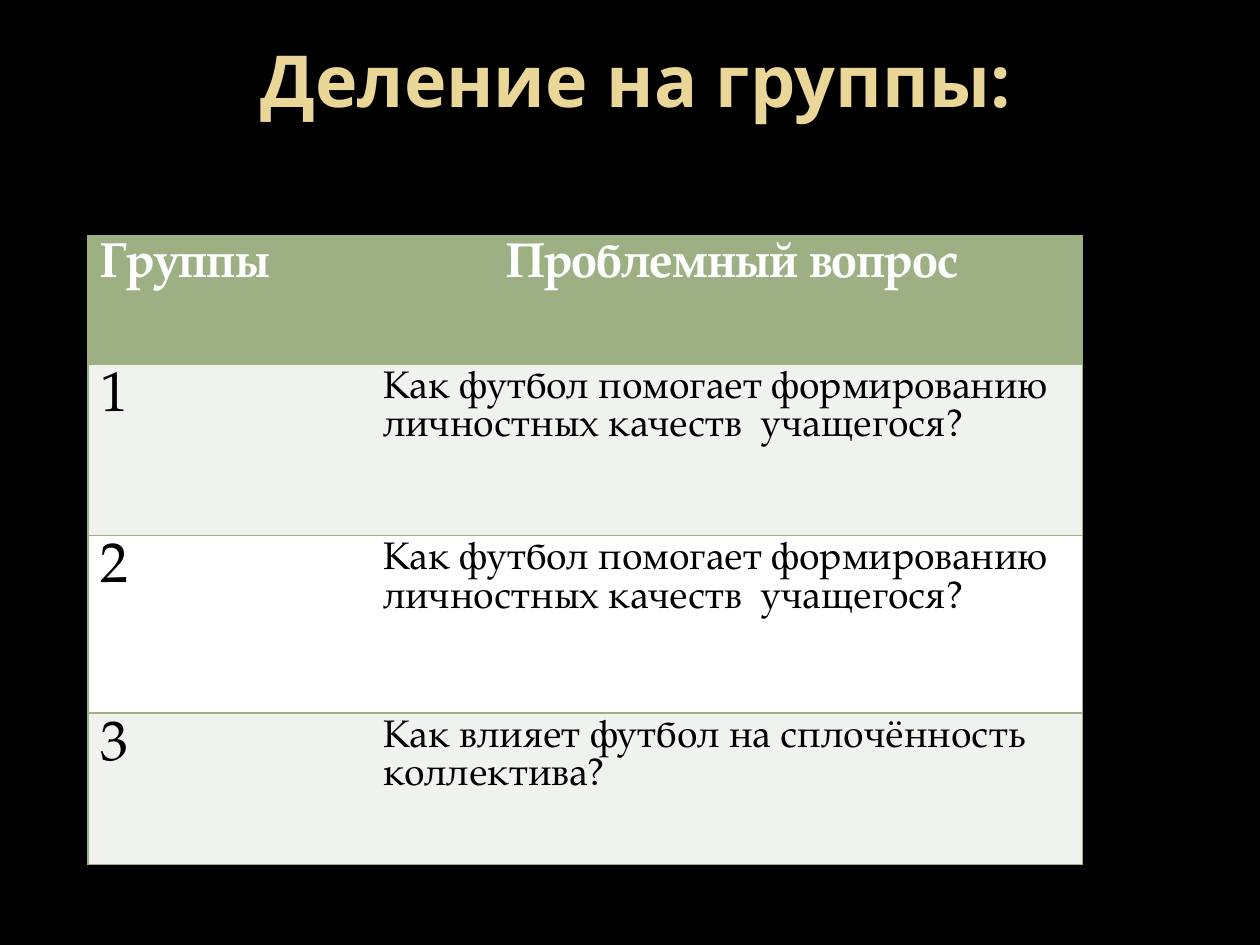
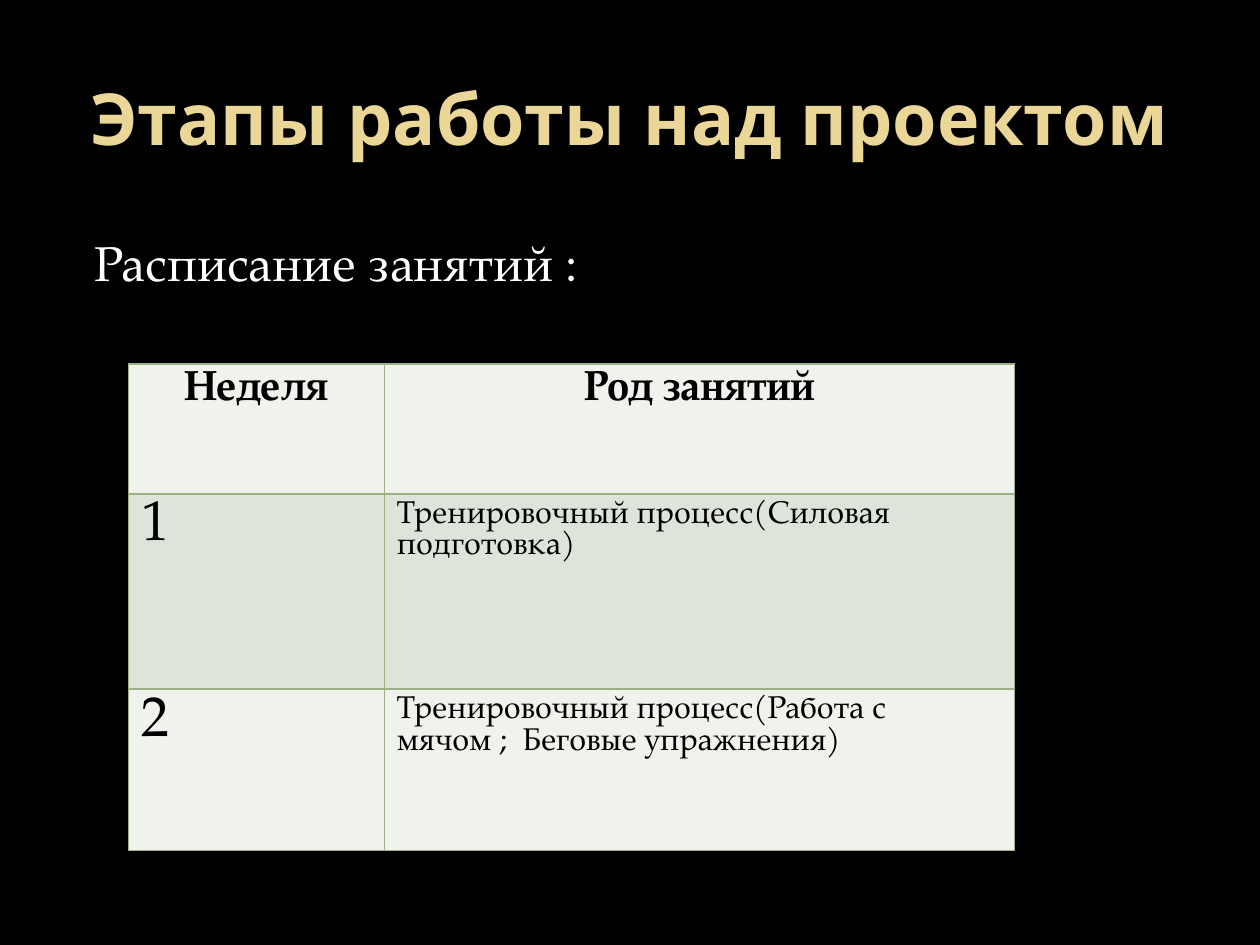
"""Build two slides on a football project: groups and stages."""
from dataclasses import dataclass

from lxml import etree
from pptx import Presentation
from pptx import util as u
from pptx.dml import color
from pptx.enum import text
from pptx.oxml import ns

SANS, SERIF = "Open Sans", "TeX Gyre Pagella"
BLACK, WHITE, GOLD = "000000", "FFFFFF", "EAD696"
GREEN, PALE, SAGE = "9CB084", "EFF2ED", "DEE4D9"
LEFT, MID = text.PP_ALIGN.LEFT, text.PP_ALIGN.CENTER
SIDES = {"l": "lnL", "r": "lnR", "t": "lnT", "b": "lnB"}


@dataclass
class Style:
    """Look of one paragraph."""
    size: float
    hue: str
    bold: bool = False
    face: str = SERIF
    align: text.PP_ALIGN = LEFT


@dataclass
class Label:
    """Text box with its place in inches."""
    words: str
    box: tuple[float, float, float, float]
    style: Style
    frame: dict


@dataclass
class Grid:
    """Table with a style and fill for each row and edges for each column."""
    spot: tuple[float, float]
    cols: list[float]
    rows: list[float]
    cells: list[tuple[str, str]]
    head: tuple[Style, Style]
    body: tuple[Style, Style]
    fills: list[str]
    edges: tuple[str, str]


TITLE = Style(41, GOLD, True, SANS, MID)
MIDDLE = {"vertical_anchor": text.MSO_ANCHOR.MIDDLE}
INDENT = {"margin_left": u.Inches(0.25)}
NUMBER = Style(32, BLACK)
WEEK = Style(24, BLACK, True, align=MID)
TRAITS = "Как футбол помогает формированию личностных качеств  учащегося?"

GROUPS = Grid(
    (0.7, 1.87), [2.24, 5.65], [1.02, 1.36, 1.41, 1.2],
    [("Группы", " Проблемный вопрос"), ("1", TRAITS), ("2", TRAITS),
     ("3", "Как влияет футбол на сплочённость коллектива?")],
    (Style(28, WHITE, True), Style(28, WHITE, True, align=MID)),
    (NUMBER, Style(22, BLACK)),
    [GREEN, PALE, WHITE, PALE], ("ltb", "rtb"))
WEEKS = Grid(
    (1.02, 2.89), [2.03, 5], [1.03, 1.55, 1.28],
    [("Неделя", "Род занятий"),
     ("1", "Тренировочный процесс(Силовая подготовка)"),
     ("2", "Тренировочный процесс(Работа с мячом ;  Беговые упражнения)")],
    (WEEK, WEEK), (NUMBER, Style(18, BLACK)),
    [PALE, SAGE, PALE], ("lrtb", "lrtb"))

PAGES = [
    ([Label("Деление на группы:", (1.64, 0, 6.82, 1.25), TITLE, MIDDLE)], GROUPS),
    ([Label("Этапы работы над проектом", (0.5, 0.3, 9, 1.25), TITLE, MIDDLE),
      Label("Расписание занятий :", (0.5, 1.8, 9, 0.7), Style(28, WHITE), INDENT)],
     WEEKS),
]


def paint(fill, hue: str) -> None:
    """Fill with one solid colour."""
    fill.solid()
    fill.fore_color.rgb = color.RGBColor.from_string(hue)


def assign(thing, values: dict) -> None:
    """Set every attribute named in a dict."""
    for name, value in values.items():
        setattr(thing, name, value)


def write(frame, words: str, style: Style) -> None:
    """Put one styled paragraph in a text frame."""
    para = frame.paragraphs[0]
    para.alignment = style.align
    run = para.add_run()
    run.text = words
    assign(run.font, {"size": u.Pt(style.size), "bold": style.bold, "name": style.face})
    paint(run.font.fill, style.hue)


def edge(cell, sides: str) -> None:
    """Draw the given cell sides in green and clear the others."""
    props = cell._tc.get_or_add_tcPr()
    for side, tag in SIDES.items():
        line = etree.SubElement(props, ns.qn(f"a:{tag}"), w=str(u.Pt(1)))
        if side in sides:
            solid = etree.SubElement(line, ns.qn("a:solidFill"))
            etree.SubElement(solid, ns.qn("a:srgbClr"), val=GREEN)
        else:
            etree.SubElement(line, ns.qn("a:noFill"))


def label(slide, item: Label) -> None:
    """Add a text box."""
    box = slide.shapes.add_textbox(*map(u.Inches, item.box))
    assign(box.text_frame, {"word_wrap": True, **item.frame})
    write(box.text_frame, item.words, item.style)


def grid(slide, item: Grid) -> None:
    """Add a table."""
    place = (*item.spot, sum(item.cols), sum(item.rows))
    table = slide.shapes.add_table(
        len(item.rows), len(item.cols), *map(u.Inches, place)).table
    assign(table, {"first_row": False, "horz_banding": False})
    for col, width in zip(table.columns, item.cols):
        col.width = u.Inches(width)
    for r, (row, height) in enumerate(zip(table.rows, item.rows)):
        row.height = u.Inches(height)
        styles = item.body if r else item.head
        for cell, words, style, sides in zip(row.cells, item.cells[r], styles, item.edges):
            edge(cell, sides)
            paint(cell.fill, item.fills[r])
            write(cell.text_frame, words, style)


def main() -> None:
    """Build and save the deck."""
    deck = Presentation()
    assign(deck, {"slide_width": u.Inches(10), "slide_height": u.Inches(7.5)})
    for labels, table in PAGES:
        slide = deck.slides.add_slide(deck.slide_layouts[6])
        paint(slide.background.fill, BLACK)
        for item in labels:
            label(slide, item)
        grid(slide, table)
    deck.save("out.pptx")


if __name__ == "__main__":
    main()
